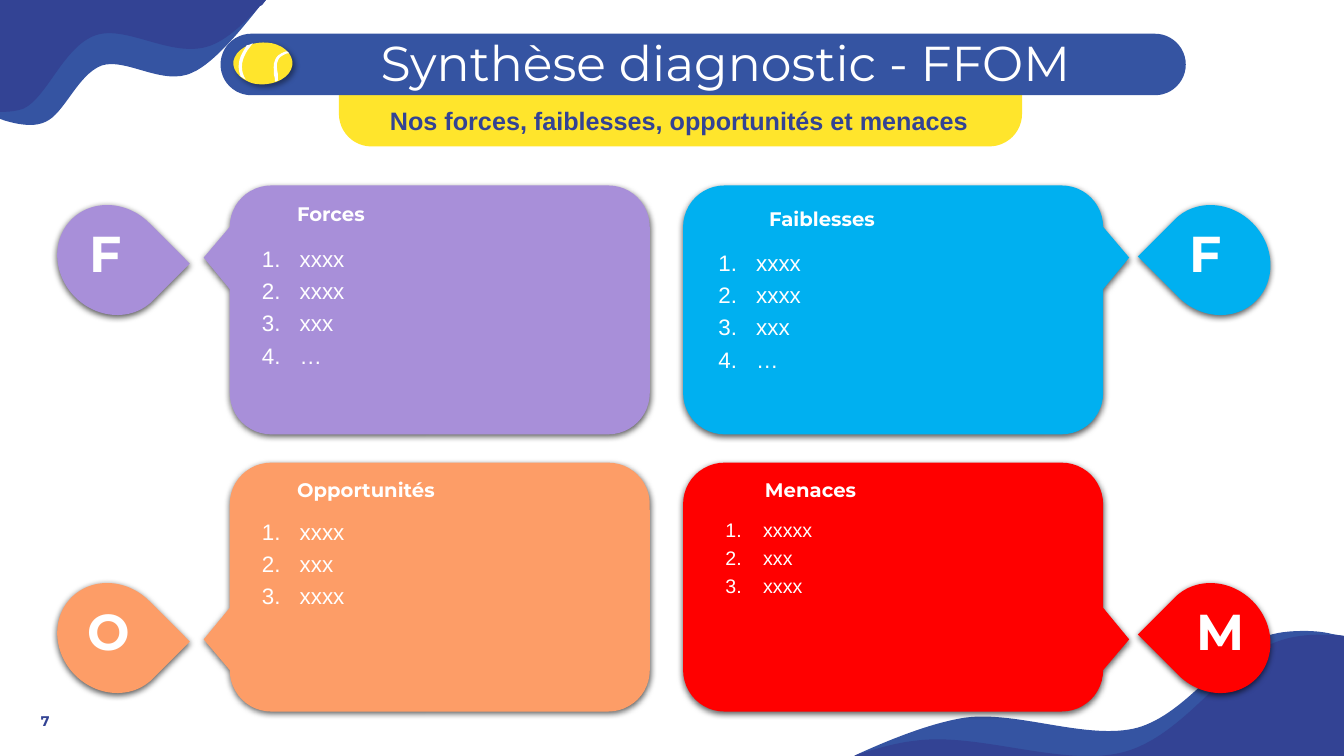
from dataclasses import dataclass

from lxml.etree import SubElement
from pptx import Presentation
from pptx.dml.color import RGBColor
from pptx.enum.shapes import MSO_SHAPE as Preset
from pptx.enum.text import MSO_ANCHOR as Anchor, PP_ALIGN as Align
from pptx.oxml.ns import qn
from pptx.util import Pt


@dataclass(frozen=True)
class Theme:
    navy: str = "334394"
    blue: str = "3554A2"
    yellow: str = "FFE52C"
    white: str = "FFFFFF"
    black: str = "000000"
    purple: str = "A88FD9"
    cyan: str = "00B0F0"
    orange: str = "FD9D67"
    red: str = "FF0000"
    display: str = "Montserrat"
    body: str = "Arial"
    title_size: int = 35
    letter_size: int = 36
    tagline_size: int = 18
    list_size: int = 16
    small_list_size: int = 14
    heading_size: int = 14
    number_size: int = 10


THEME = Theme()
CARD_SHADOW = (63, 4.5, 1.5, 90)
BALL_SHADOW = (40, 4, 3, 45)
UNIT = 0.72

TOP_WAVES = (
    (THEME.blue, [
        (260, 5), (259, 5, 259, 6, 258, 6), (240, 29, 212, 63, 191, 72),
        (162, 86, 125, 57, 101, 65), (77, 74, 64, 113, 45, 121),
        (41, 123, 35, 124, 30, 124), (22, 124, 13, 122, 6, 120),
        (0, 118), (0, 0), (264, 0), (260, 5)]),
    (THEME.navy, [
        (264, 0), (260, 5), (259, 5, 259, 6, 258, 6), (243, 23, 226, 38, 212, 44),
        (174, 61, 127, 24, 95, 35), (63, 46, 47, 97, 23, 108),
        (17, 110, 10, 111, 3, 111), (2, 111, 1, 111, 0, 111), (0, 0), (264, 0)]),
)
BOTTOM_WAVES = (
    (THEME.blue, [
        (474, 3), (466, 1, 457, 0, 447, 0), (433, 0, 418, 1, 404, 7),
        (367, 21, 330, 82, 281, 96), (232, 109, 162, 79, 110, 86),
        (77, 91, 37, 107, 6, 121), (2, 123), (0, 124), (486, 124), (486, 5),
        (474, 3)]),
    (THEME.navy, [
        (486, 124), (486, 5), (480, 4, 475, 4, 469, 4), (452, 3, 433, 5, 416, 12),
        (371, 30, 327, 104, 268, 120), (208, 136, 123, 100, 60, 109),
        (41, 111, 21, 117, 2, 123), (0, 124), (486, 124)]),
)
BALL = [(38, 1), (53, 4, 62, 16, 57, 27), (52, 38, 36, 44, 20, 41),
        (5, 37, -4, 25, 1, 15), (6, 4, 22, -2, 38, 1)]
SEAMS = (
    [(12, 11), (14, 7, 17, 4, 19, 1), (17, 2, 15, 3, 13, 3), (12, 5, 10, 8, 9, 10),
     (6, 15, 5, 20, 5, 24), (5, 28, 6, 31, 7, 34), (9, 35, 10, 36, 12, 37),
     (7, 29, 7, 20, 12, 11)],
    [(44, 32), (43, 27, 42, 22, 44, 18), (45, 15, 48, 13, 53, 11),
     (54, 11, 54, 11, 55, 11), (54, 10, 54, 10, 53, 9), (53, 9, 53, 9, 52, 9),
     (46, 11, 42, 14, 41, 18), (39, 22, 40, 27, 40, 32), (41, 35, 41, 37, 41, 39),
     (42, 39, 43, 39, 44, 38), (44, 36, 44, 34, 44, 32)],
)


@dataclass(frozen=True)
class Quadrant:
    column: int
    row: int
    color: str
    letter: str
    letter_box: tuple
    heading: str
    heading_at: tuple
    items: tuple
    items_at: tuple
    items_size: int = THEME.list_size


QUADRANTS = (
    Quadrant(0, 0, THEME.purple, "F", (-107.3, 39), "Forces", (41, 7.9),
             ("xxxx", "xxxx", "xxx", "…"), (23, 38.7)),
    Quadrant(1, 0, THEME.cyan, "F", (354.6, 39), "Faiblesses", (54.4, 11.5),
             ("xxxx", "xxxx", "xxx", "…"), (25.2, 41.6)),
    Quadrant(0, 1, THEME.orange, "O", (-108.7, 48.2), "Opportunités", (41, 7.2),
             ("xxxx", "xxx", "xxxx"), (23, 35.8)),
    Quadrant(1, 1, THEME.red, "M", (359.7, 49), "Menaces", (51.4, 6.9),
             ("xxxxx", "xxx", "xxxx"), (30.2, 36), THEME.small_list_size),
)


def paint(shape, color, shadow=None):
    shape.fill.solid()
    shape.fill.fore_color.rgb = RGBColor.from_string(color)
    shape.line.fill.background()
    shape.shadow.inherit = False
    if shadow:
        alpha, blur, distance, angle = shadow
        effects = shape._element.spPr.find(qn("a:effectLst"))
        outer = SubElement(effects, qn("a:outerShdw"), blurRad=str(Pt(blur)),
                           dist=str(Pt(distance)), dir=str(angle * 60000),
                           algn="ctr", rotWithShape="0")
        tint = SubElement(outer, qn("a:srgbClr"), val=THEME.black)
        SubElement(tint, qn("a:alpha"), val=str(alpha * 1000))


def add_preset(slide, preset, box, color, shadow=None):
    shape = slide.shapes.add_shape(preset, *map(Pt, box))
    paint(shape, color, shadow)
    return shape


def add_text(slide, box, text, size, color, font=THEME.display, bold=False,
             align=Align.LEFT, anchor=Anchor.TOP, wrap=True):
    shape = slide.shapes.add_textbox(*map(Pt, box))
    frame = shape.text_frame
    frame.word_wrap = wrap
    frame.vertical_anchor = anchor
    frame.text = text
    for paragraph in frame.paragraphs:
        paragraph.alignment = align
        for run in paragraph.runs:
            run.font.name = font
            run.font.size = Pt(size)
            run.font.bold = bold
            run.font.color.rgb = RGBColor.from_string(color)
    return frame


def add_outline(slide, left, top, outline, color, shadow=None):
    knots = [segment[-2:] for segment in outline]
    builder = slide.shapes.build_freeform(*knots[0], scale=Pt(UNIT))
    builder.add_line_segments(knots[1:], close=False)
    shape = builder.convert_to_shape(Pt(left), Pt(top))
    min_x, min_y = (min(values) for values in zip(*knots))
    lines = list(shape._element.iter(qn("a:lnTo")))
    for line, segment in zip(lines, outline[1:]):
        if len(segment) == 6:
            curve = SubElement(line.getparent(), qn("a:cubicBezTo"))
            for x, y in zip(segment[::2], segment[1::2]):
                SubElement(curve, qn("a:pt"), x=str(x - min_x), y=str(y - min_y))
            line.getparent().replace(line, curve)
    SubElement(next(shape._element.iter(qn("a:path"))), qn("a:close"))
    paint(shape, color, shadow)


def add_waves(slide, left, top, waves):
    for color, outline in waves:
        add_outline(slide, left, top, outline, color)


def add_list(slide, box, items, size):
    frame = add_text(slide, box, "\n".join(items), size, THEME.white, THEME.body)
    frame.margin_left = frame.margin_top = frame.margin_right = frame.margin_bottom = 0
    for paragraph in frame.paragraphs:
        paragraph.line_spacing = 1.2
        properties = paragraph._p.get_or_add_pPr()
        properties.set("marL", str(Pt(27)))
        properties.set("indent", str(-Pt(27)))
        SubElement(properties, qn("a:buFont"), typeface=THEME.body)
        SubElement(properties, qn("a:buAutoNum"), type="arabicPeriod")


def add_quadrant(slide, quadrant, left, top, width, height):
    drop_left = left + (339.4 if quadrant.column else -125.1)
    drop_top = top + (87.8 if quadrant.row else 15.8)
    drop = add_preset(slide, Preset.TEAR, (drop_left, drop_top, 82.1, 74.9),
                      quadrant.color, CARD_SHADOW)
    drop.rotation = 225 if quadrant.column else 45
    letter_left, letter_width = quadrant.letter_box
    add_text(slide, (left + letter_left, drop_top + 7, letter_width, 51),
             quadrant.letter, THEME.letter_size, THEME.white, bold=True, wrap=False)

    callout = add_preset(slide, Preset.ROUNDED_RECTANGULAR_CALLOUT,
                         (left, top, width, height), quadrant.color, CARD_SHADOW)
    reach = 0.5 + 18.6 / width
    callout.adjustments[0] = reach if quadrant.column else -reach
    callout.adjustments[1] = 0.21 if quadrant.row else -0.21
    callout.adjustments[2] = 1 / 6
    x, y = quadrant.heading_at
    add_text(slide, (left + x, top + y, 200 if quadrant.column else 171.4, 24.5),
             quadrant.heading, THEME.heading_size, THEME.white, bold=True,
             anchor=Anchor.MIDDLE)
    x, y = quadrant.items_at
    list_height = len(quadrant.items) * quadrant.items_size * 1.4
    add_list(slide, (left + x, top + y, 264 if quadrant.row else 245, list_height),
             quadrant.items, quadrant.items_size)


def add_header(slide, left, top, width, height):
    tab = add_preset(slide, Preset.ROUNDED_RECTANGLE,
                     (left + 84.6, top + 2.7, 488.2, 77.8), THEME.yellow)
    tab.adjustments[0] = 0.3
    bar = add_preset(slide, Preset.ROUNDED_RECTANGLE, (left, top, width, height), THEME.blue)
    bar.adjustments[0] = 0.5
    add_text(slide, (left + 32.3, top - 4.3, 657.4, 49.7), "Synthèse diagnostic - FFOM",
             THEME.title_size, THEME.white, align=Align.CENTER)
    ball_left, ball_top = left + 9.4, top + 6.1
    add_outline(slide, ball_left, ball_top, BALL, THEME.yellow, BALL_SHADOW)
    for seam in SEAMS:
        add_outline(slide, ball_left, ball_top, seam, THEME.white)
    add_text(slide, (left + 101.2, top + 47.6, 452.9, 28.8),
             "Nos forces, faiblesses, opportunités et menaces", THEME.tagline_size,
             THEME.navy, THEME.body, bold=True, align=Align.CENTER)


def main():
    presentation = Presentation()
    presentation.slide_width, presentation.slide_height = Pt(960.5), Pt(540)
    slide = presentation.slides.add_slide(presentation.slide_layouts[6])
    add_waves(slide, 0, 0, TOP_WAVES)
    add_waves(slide, 610.6, 450.7, BOTTOM_WAVES)
    add_text(slide, (13.7, 505.4, 28.8, 21.6), "7", THEME.number_size, THEME.navy,
             bold=True, align=Align.RIGHT)
    for quadrant in QUADRANTS:
        add_quadrant(slide, quadrant, 164.2 + 324 * quadrant.column,
                     132.5 + 198 * quadrant.row, 300.2, 177.8)
    add_header(slide, 157.6, 24.1, 689.8, 43.9)
    presentation.save("out.pptx")


if __name__ == "__main__":
    main()
